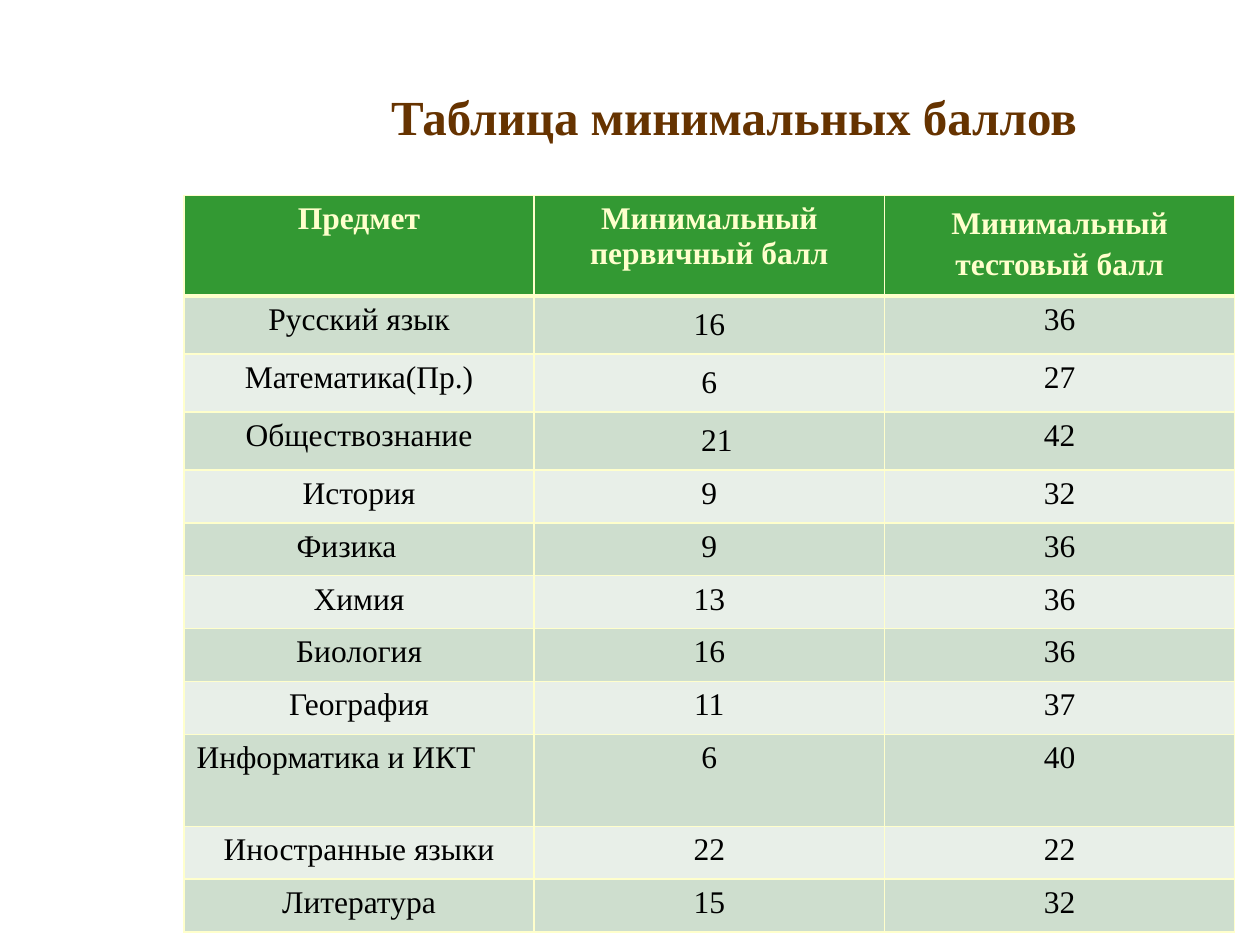
"""Build a slide with a table of minimum exam scores."""
from typing import NamedTuple

from lxml.etree import SubElement
from pptx import Presentation
from pptx.dml.color import RGBColor
from pptx.enum.shapes import MSO_SHAPE
from pptx.enum.text import MSO_ANCHOR, PP_ALIGN
from pptx.oxml.ns import qn
from pptx.util import Inches, Pt

WHITE = RGBColor(0xFF, 0xFF, 0xFF)
BLACK = RGBColor(0x00, 0x00, 0x00)
BROWN = RGBColor(0x66, 0x33, 0x00)
CREAM = RGBColor(0xFF, 0xFF, 0xCC)
GREEN = RGBColor(0x33, 0x99, 0x33)
BANDS = (RGBColor(0xE8, 0xEF, 0xE8), RGBColor(0xCE, 0xDE, 0xCE))
TITLE_FONT = {"name": "Times New Roman", "size": Pt(28), "bold": True}
HEADER_FONT = {"name": "Times New Roman", "size": Pt(18), "bold": True}
BODY_FONT = {**HEADER_FONT, "bold": False}
LOOSE = {"line_spacing": 1.15, "space_after": Pt(10)}


class Entry(NamedTuple):
    text: str
    paragraph_format: dict = {}
    margins: dict = {}


class Row(NamedTuple):
    subject: Entry
    primary: Entry
    test: Entry
    height: float = 0.42


ROWS = (
    Row(Entry("Предмет"), Entry("Минимальный первичный балл"),
        Entry("Минимальный тестовый балл", LOOSE), 0.8),
    Row(Entry("Русский язык"), Entry("16", LOOSE), Entry("36"), 0.46),
    Row(Entry("Математика(Пр.)"), Entry("6", LOOSE), Entry("27"), 0.46),
    Row(Entry("Обществознание"), Entry("21", LOOSE, {"margin_left": Inches(0.22)}),
        Entry("42"), 0.46),
    Row(Entry("История"), Entry("9"), Entry("32")),
    Row(Entry("Физика", margins={"margin_right": Inches(0.3)}), Entry("9"), Entry("36")),
    Row(Entry("Химия"), Entry("13"), Entry("36")),
    Row(Entry("Биология"), Entry("16"), Entry("36")),
    Row(Entry("География"), Entry("11"), Entry("37")),
    Row(Entry("Информатика и ИКТ", {"alignment": PP_ALIGN.LEFT}),
        Entry("6"), Entry("40"), 0.73),
    Row(Entry("Иностранные языки"), Entry("22"), Entry("22")),
    Row(Entry("Литература"), Entry("15"), Entry("32")),
)


def apply_format(target, values: dict) -> None:
    for attribute, value in values.items():
        setattr(target, attribute, value)


def write_text(paragraph, text: str, font: dict, color: RGBColor) -> None:
    paragraph.alignment = PP_ALIGN.CENTER
    run = paragraph.add_run()
    run.text = text
    apply_format(run.font, font)
    run.font.color.rgb = color


def add_borders(cell, widths: dict) -> None:
    properties = cell._tc.get_or_add_tcPr()
    for side, width in widths.items():
        border = SubElement(properties, qn(f"a:ln{side}"), w=str(Pt(width)))
        fill = SubElement(border, qn("a:solidFill"))
        SubElement(fill, qn("a:srgbClr"), val=str(CREAM))


def fill_cell(cell, entry: Entry, row_index: int) -> None:
    header = row_index == 0
    add_borders(cell, {"L": 1, "R": 1, "T": 3 if row_index == 1 else 1,
                       "B": 3 if header else 1})
    cell.fill.solid()
    cell.fill.fore_color.rgb = GREEN if header else BANDS[row_index % 2]
    apply_format(cell, entry.margins)
    paragraph = cell.text_frame.paragraphs[0]
    write_text(paragraph, entry.text, HEADER_FONT if header else BODY_FONT,
               CREAM if header else BLACK)
    apply_format(paragraph, entry.paragraph_format)


def add_scores(slide) -> None:
    table = slide.shapes.add_table(len(ROWS), 3, Inches(1.46), Inches(1.55),
                                   Inches(8.34), Inches(5.85)).table
    apply_format(table, {"first_row": False, "horz_banding": False})
    for row_index, row in enumerate(ROWS):
        table.rows[row_index].height = Inches(row.height)
        for column, entry in enumerate((row.subject, row.primary, row.test)):
            fill_cell(table.cell(row_index, column), entry, row_index)


def add_title(slide) -> None:
    title = slide.shapes.add_shape(MSO_SHAPE.RECTANGLE, Inches(1.93), Inches(0.3),
                                   Inches(7.79), Inches(1.24))
    title.shadow.inherit = False
    title.fill.solid()
    title.fill.fore_color.rgb = WHITE
    color = title.fill._xPr.find(qn("a:solidFill"))[0]
    SubElement(color, qn("a:alpha"), val="90000")
    title.line.color.rgb = WHITE
    title.line.width = Pt(1.5)
    apply_format(title.text_frame, {"word_wrap": True, "vertical_anchor": MSO_ANCHOR.MIDDLE})
    write_text(title.text_frame.paragraphs[0], "Таблица минимальных баллов",
               TITLE_FONT, BROWN)


def main() -> None:
    presentation = Presentation()
    apply_format(presentation, {"slide_width": Inches(10), "slide_height": Inches(7.5)})
    slide = presentation.slides.add_slide(presentation.slide_layouts[6])
    add_scores(slide)
    add_title(slide)
    presentation.save("out.pptx")


if __name__ == "__main__":
    main()
